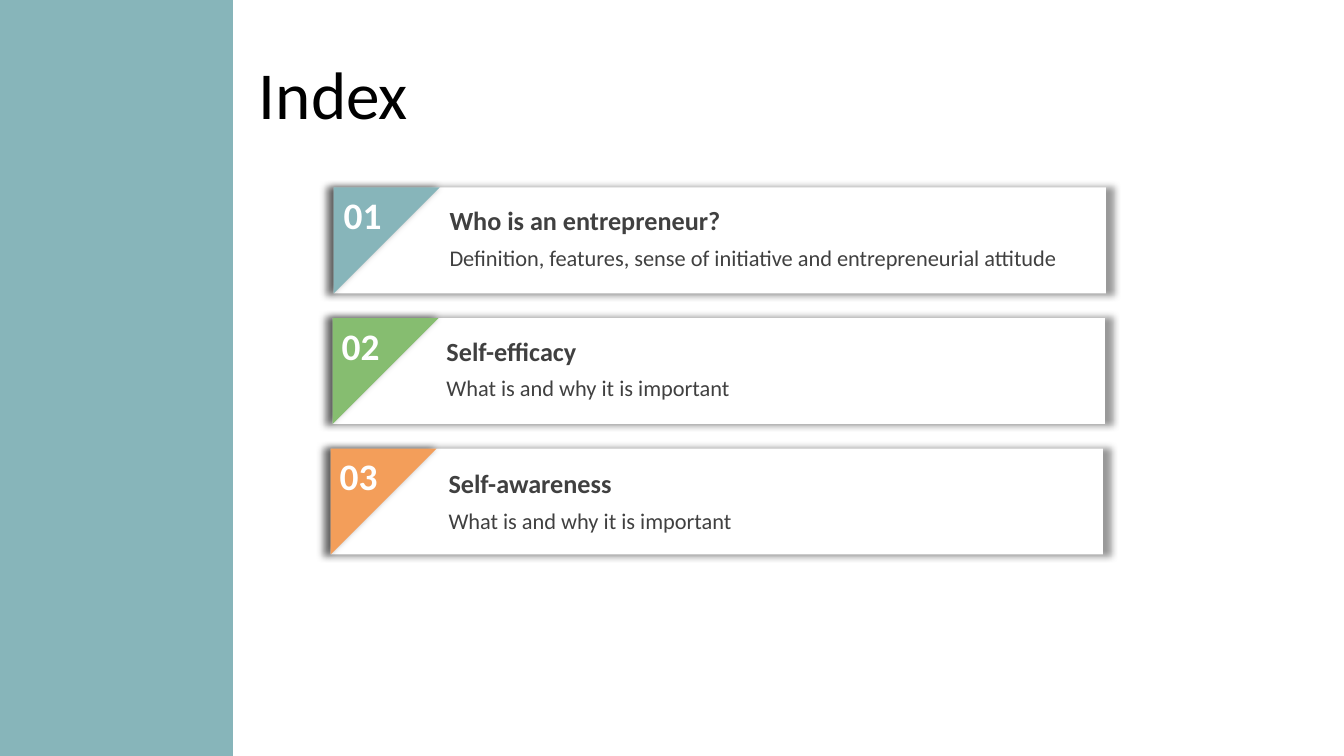
from lxml import etree
from pptx import Presentation
from pptx.dml.color import RGBColor
from pptx.enum import shapes, text
from pptx.oxml.ns import qn
from pptx.util import Inches, Pt

# Content
TITLE = "Index"
FONT = "Calibri"
COLORS = {"teal": "87B5BA", "green": "86BD70", "orange": "F39E5A",
          "white": "FFFFFF", "black": "000000", "gray": "404040"}
# number, heading, description, accent, card left, text left, text offset from card top
ENTRIES = [
    ("01", "Who is an entrepreneur?",
     "Definition, features, sense of initiative and entrepreneurial attitude",
     "teal", 3.31, 4.36, 0.12),
    ("02", "Self-efficacy", "What is and why it is important",
     "green", 3.30, 4.33, 0.12),
    ("03", "Self-awareness", "What is and why it is important",
     "orange", 3.28, 4.35, 0.14),
]

# Card layout in inches
FIRST_TOP, CARD_STEP = 1.86, 1.295
CARD_WIDTH, CARD_HEIGHT = 7.66, 1.05
TEXT_WIDTH, DESCRIPTION_DROP = 6.41, 0.39

presentation = Presentation()
presentation.slide_width, presentation.slide_height = Inches(13.33), Inches(7.5)
slide = presentation.slides.add_slide(presentation.slide_layouts[6])


def add_block(kind, left, top, width, height, color):
    shape = slide.shapes.add_shape(
        kind, Inches(left), Inches(top), Inches(width), Inches(height))
    shape.fill.solid()
    shape.fill.fore_color.rgb = RGBColor.from_string(COLORS[color])
    shape.line.fill.background()
    shape.shadow.inherit = False
    return shape


def add_glow_shadow(shape):
    """Soft centred shadow, slightly larger than the shape."""
    effects = shape._element.spPr.find(qn("a:effectLst"))
    shadow = etree.SubElement(
        effects, qn("a:outerShdw"), blurRad=str(Pt(5)), sx="102000", sy="102000",
        algn="ctr", rotWithShape="0")
    color = etree.SubElement(shadow, qn("a:srgbClr"), val=COLORS["black"])
    etree.SubElement(color, qn("a:alpha"), val="40000")


def add_text(content, left, top, width, height, size, color, bold=False):
    box = slide.shapes.add_textbox(
        Inches(left), Inches(top), Inches(width), Inches(height))
    frame = box.text_frame
    frame.word_wrap = True
    frame.text = content
    font = frame.paragraphs[0].runs[0].font
    font.name, font.size, font.bold = FONT, Pt(size), bold
    font.color.rgb = RGBColor.from_string(COLORS[color])
    return frame


# Side band and title
add_block(shapes.MSO_SHAPE.RECTANGLE, 0, 0, 2.31, 7.5, "teal")
title_frame = add_text(TITLE, 2.47, 0.5, 9.61, 0.84, 48, "black")
title_frame.vertical_anchor = text.MSO_ANCHOR.MIDDLE

# Index cards
for index, (number, heading, description, accent, left, text_left, offset) in enumerate(ENTRIES):
    top = FIRST_TOP + index * CARD_STEP
    card = add_block(shapes.MSO_SHAPE.RECTANGLE, left, top, CARD_WIDTH, CARD_HEIGHT, "white")
    corner = add_block(shapes.MSO_SHAPE.RIGHT_TRIANGLE, left, top,
                       CARD_HEIGHT, CARD_HEIGHT, accent)
    corner.rotation = 90
    for shape in (card, corner):
        add_glow_shadow(shape)
    add_text(number, left - 0.01 * (index > 0), top, 0.78, 0.55, 26.7, "white", True)
    text_top = top + offset
    add_text(heading, text_left, text_top, TEXT_WIDTH, 0.42, 18.7, "gray", True)
    add_text(description, text_left, text_top + DESCRIPTION_DROP,
             TEXT_WIDTH, 0.37, 16, "gray")

presentation.save("out.pptx")
